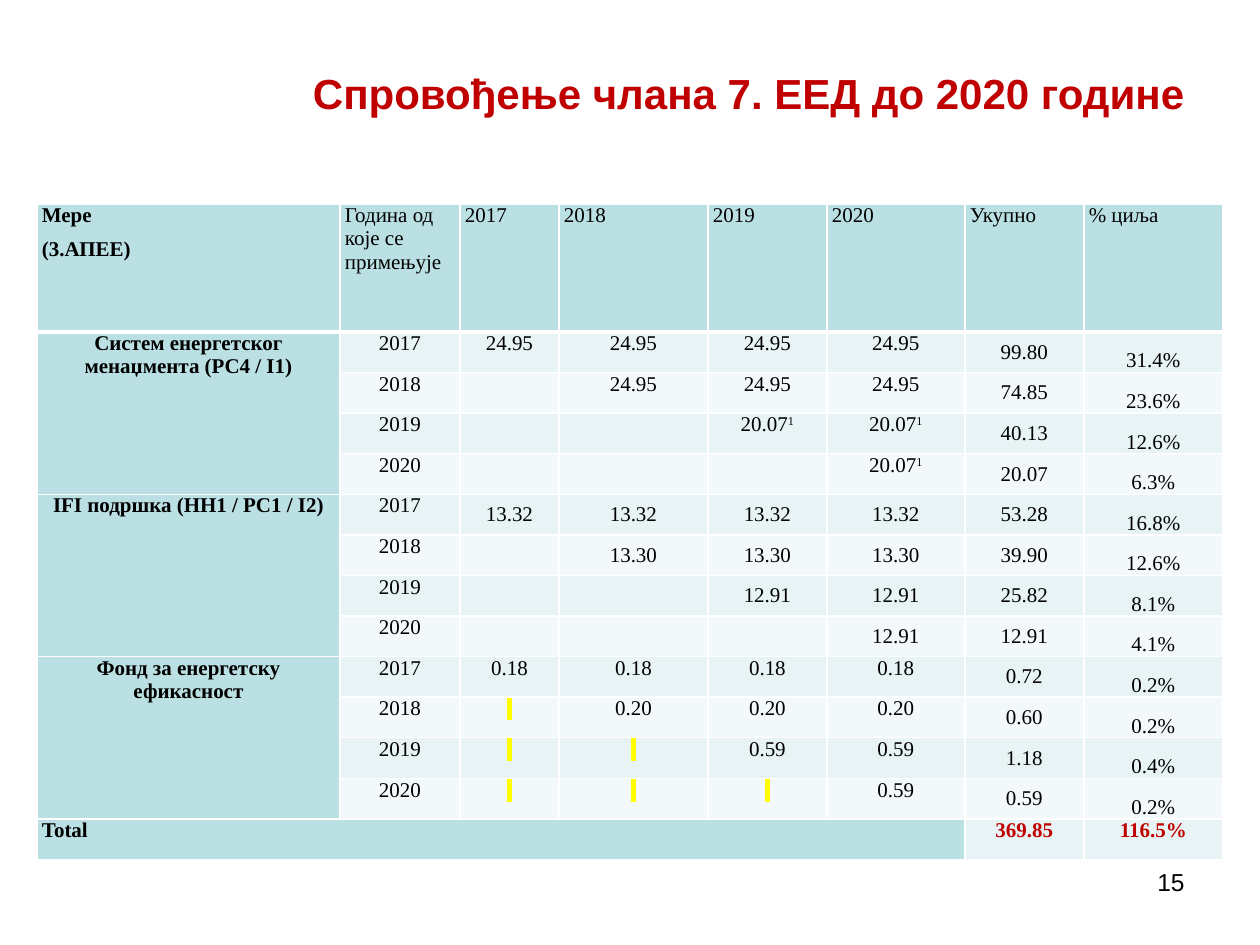
from lxml import etree
from pptx import Presentation
from pptx.dml.color import RGBColor
from pptx.enum.text import MSO_ANCHOR, PP_ALIGN
from pptx.oxml.ns import qn
from pptx.util import Pt

SCALE = 914400 / 126  # EMU in one px
LEFT, CENTER, RIGHT = PP_ALIGN.LEFT, PP_ALIGN.CENTER, PP_ALIGN.RIGHT
TOP, MIDDLE, BOTTOM = MSO_ANCHOR.TOP, MSO_ANCHOR.MIDDLE, MSO_ANCHOR.BOTTOM
COLORS = {"accent": "C00000", "text": "000000", "head": "BBE0E3", "band": "E7F3F4",
          "plain": "F3F9FA", "border": "FFFFFF", "mark": "FFFF00"}
NBSP = " "

YEARS = ["2017", "2018", "2019", "2020"]
HEADERS = ["Мере\n(3.АПЕЕ)", "Година од које се примењује", *YEARS, "Укупно", "% циља"]
COL_WIDTHS = [303, 120, 99, 149, 119, 138, 119, 139]
# Measure, anchor of its values, filler before the first year,
# then (yearly value, total, share) for each starting year
MEASURES = [
    ("Систем енергетског менаџмента (PC4 / I1)", TOP, "",
     [("24.95", "99.80", "31.4%"), ("24.95", "74.85", "23.6%"),
      ("20.07^1", "40.13", "12.6%"), ("20.07^1", "20.07", "6.3%")]),
    ("IFI подршка (HH1 / PC1 / I2)", MIDDLE, "",
     [("13.32", "53.28", "16.8%"), ("13.30", "39.90", "12.6%"),
      ("12.91", "25.82", "8.1%"), ("12.91", "12.91", "4.1%")]),
    ("Фонд за енергетску ефикасност", TOP, NBSP,
     [("0.18", "0.72", "0.2%"), ("0.20", "0.60", "0.2%"),
      ("0.59", "1.18", "0.4%"), ("0.59", "0.59", "0.2%")]),
]


def px(n):
    return round(n * SCALE)


def rgb(name):
    return RGBColor.from_string(COLORS[name])


def write(tf, text, font="Times New Roman", size=12, color="text", bold=False,
          align=LEFT, gap=0):
    """One paragraph per line; what follows ^ is superscript."""
    for i, line in enumerate(text.split("\n")):
        p = tf.add_paragraph() if i else tf.paragraphs[0]
        p.alignment = align
        p.space_before, p.space_after = Pt(gap if i else 0), Pt(gap)
        if not line:
            p._p.get_or_add_endParaRPr().set("sz", str(size * 100))
            continue
        for k, part in enumerate(line.split("^")):
            r = p.add_run()
            r.text = part
            r.font.name, r.font.size, r.font.bold = font, Pt(size), bold
            r.font.color.rgb = rgb(color)
            r_pr = r._r.get_or_add_rPr()
            if k:
                r_pr.set("baseline", "30000")
            if part == NBSP:
                mark = etree.Element(qn("a:highlight"))
                etree.SubElement(mark, qn("a:srgbClr"), val=COLORS["mark"])
                r_pr.find(qn("a:solidFill")).addnext(mark)


def set_borders(cell, bottom=1):
    tc_pr = cell._tc.get_or_add_tcPr()
    for i, (side, width) in enumerate([("L", 1), ("R", 1), ("T", 1), ("B", bottom)]):
        ln = etree.Element(qn(f"a:ln{side}"), w=str(Pt(width)))
        fill = etree.SubElement(ln, qn("a:solidFill"))
        etree.SubElement(fill, qn("a:srgbClr"), val=COLORS["border"])
        tc_pr.insert(i, ln)


def fill_cell(cell, text, fill, anchor=TOP, **fmt):
    cell.fill.solid()
    cell.fill.fore_color.rgb = rgb(fill)
    cell.margin_left = cell.margin_right = px(5)
    cell.margin_top = cell.margin_bottom = 0
    cell.vertical_anchor = anchor
    write(cell.text_frame, text, gap=3, **fmt)


def add_title(s, x, y, w, h):
    sp = s.shapes.title
    sp.left, sp.top, sp.width, sp.height = px(x), px(y), px(w), px(h)
    tf = sp.text_frame
    tf.vertical_anchor = MIDDLE
    tf.margin_bottom = px(53)
    write(tf, "Спровођење члана 7. ЕЕД до 2020 године", font="Arial", size=24,
          color="accent", bold=True, align=RIGHT)


def add_page_number(s, x, y, w, h):
    tf = s.shapes.add_textbox(px(x), px(y), px(w), px(h)).text_frame
    tf.word_wrap = True
    write(tf, "15", font="Arial", size=14, align=RIGHT)


def add_measures_table(s, x, y, w, h, head_h):
    n_years = len(YEARS)
    n_rows = 2 + n_years * len(MEASURES)
    tbl = s.shapes.add_table(n_rows, len(HEADERS), px(x), px(y), px(w), px(h)).table
    tbl.first_row = tbl.horz_banding = False
    for col, width in zip(tbl.columns, COL_WIDTHS):
        col.width = px(width)
    for i, row in enumerate(tbl.rows):
        row.height = px(h - head_h) // (n_rows - 1) if i else px(head_h)
        for cell in row.cells:
            set_borders(cell, bottom=1 if i else 3)

    # Header row
    for c, text in enumerate(HEADERS):
        fill_cell(tbl.cell(0, c), text, "head", bold=c == 0)

    # Four rows for each measure
    for m, (name, anchor, filler, rows) in enumerate(MEASURES):
        first = 1 + m * n_years
        tbl.cell(first, 0).merge(tbl.cell(first + n_years - 1, 0))
        fill_cell(tbl.cell(first, 0), name, "head", bold=True, align=CENTER)
        for i, (value, total, share) in enumerate(rows):
            values = [filler] * i + [value] * (n_years - i)
            texts = [YEARS[i], *values, total, share]
            anchors = [TOP] + [anchor] * n_years + [MIDDLE, BOTTOM]
            for c, (text, anc) in enumerate(zip(texts, anchors), start=1):
                fill_cell(tbl.cell(first + i, c), text, "plain" if i % 2 else "band",
                          anchor=anc, align=CENTER)

    # Total row
    last = n_rows - 1
    tbl.cell(last, 0).merge(tbl.cell(last, 5))
    fill_cell(tbl.cell(last, 0), "Total", "head", bold=True)
    for c, text in [(6, "369.85"), (7, "116.5%")]:
        fill_cell(tbl.cell(last, c), text, "band", bold=True, color="accent", align=CENTER)


def main():
    prs = Presentation()
    prs.slide_width, prs.slide_height = px(1260), px(945)
    s = prs.slides.add_slide(prs.slide_layouts[5])
    add_title(s, 63, 38, 1134, 157)
    add_page_number(s, 903, 861, 294, 65)
    add_measures_table(s, 37, 204, sum(COL_WIDTHS), 656, head_h=128)
    prs.save("out.pptx")


if __name__ == "__main__":
    main()
